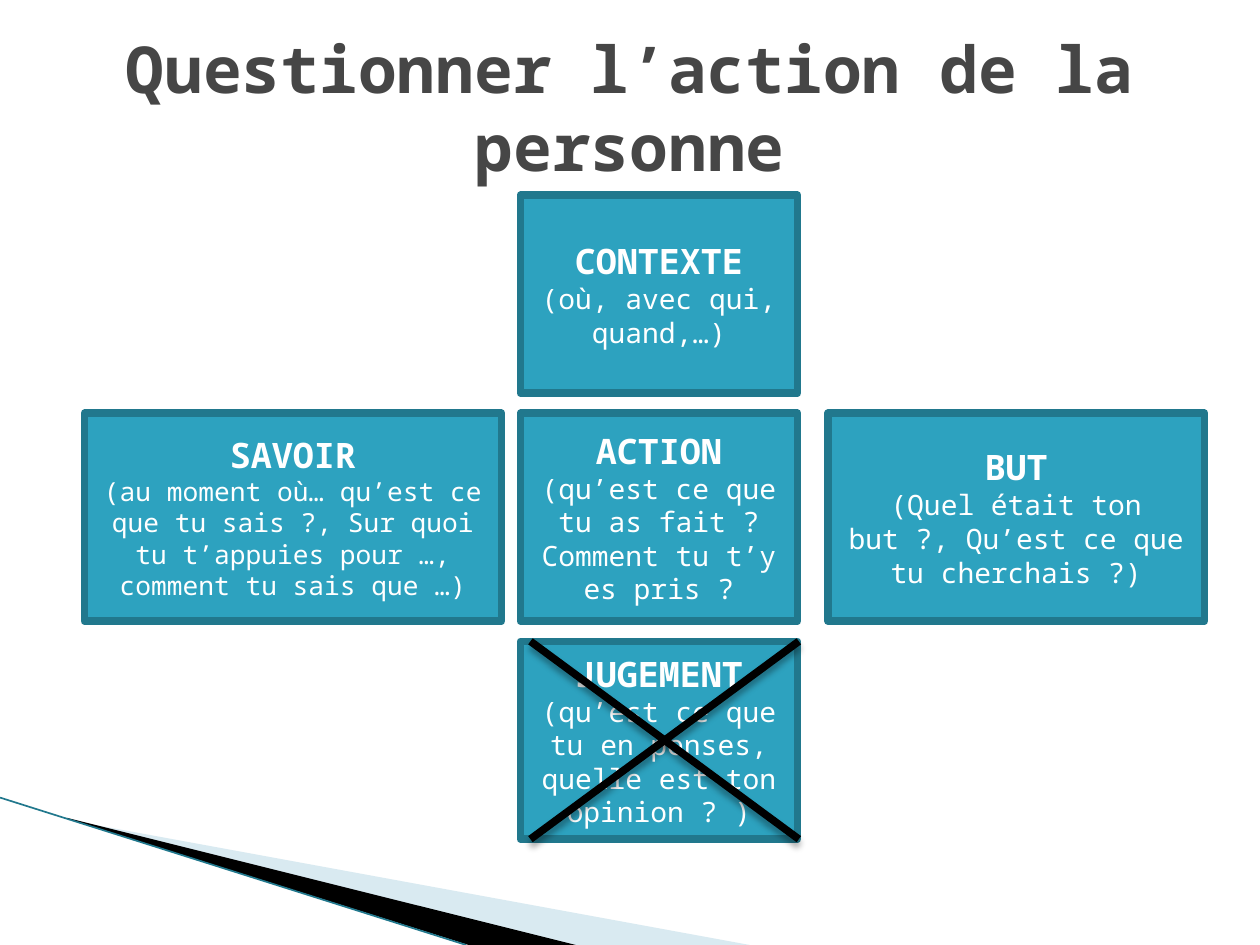
from dataclasses import dataclass

from lxml.etree import SubElement
from pptx import Presentation
from pptx.dml.color import RGBColor
from pptx.enum.shapes import MSO_CONNECTOR, MSO_SHAPE
from pptx.enum.text import MSO_ANCHOR, MSO_AUTO_SIZE, PP_ALIGN
from pptx.oxml.ns import qn
from pptx.util import Pt

SCALE = 9144


@dataclass(frozen=True)
class Theme:
    """Colours, font and sizes of the slide."""
    font: str = "Noto Sans Mono"
    title: str = "464646"
    fill: str = "2DA2BF"
    edge: str = "21788D"
    pale: str = "A0CBDC"
    white: str = "FFFFFF"
    black: str = "000000"
    title_pt: float = 36.9
    head_pt: float = 20
    body_pt: float = 16
    dense_pt: float = 15
    edge_pt: float = 4.33
    thin_pt: float = 0.95


THEME = Theme()


def px(*nums):
    """Turn px lengths into EMU."""
    return [n * SCALE for n in nums]


def style(para, size, colour, bold):
    """Centre a paragraph and format its runs."""
    para.alignment = PP_ALIGN.CENTER
    for run in para.runs:
        font = run.font
        font.name, font.size, font.bold = THEME.font, Pt(size), bold
        font.color.rgb = RGBColor.from_string(colour)


def paint(line, colour, width):
    """Set the colour and width of a line."""
    line.color.rgb = RGBColor.from_string(colour)
    line.width = Pt(width)


def add_title(slide, box, text):
    """Place and format the title."""
    title = slide.shapes.title
    title.left, title.top, title.width, title.height = px(*box)
    frame = title.text_frame
    frame.text = text
    frame.word_wrap = True
    frame.auto_size = MSO_AUTO_SIZE.NONE
    frame.vertical_anchor = MSO_ANCHOR.MIDDLE
    style(frame.paragraphs[0], THEME.title_pt, THEME.title, True)


def add_line(slide, start, end, colour, width):
    """Draw a straight line and return its empty effect list."""
    line = slide.shapes.add_connector(MSO_CONNECTOR.STRAIGHT, *px(*start, *end))
    paint(line.line, colour, width)
    return SubElement(line._element.spPr, qn("a:effectLst"))


def add_wedge(slide, left, top, points, colour, alpha=100):
    """Draw a filled outline from points relative to its corner."""
    spots = [(left + x, top + y) for x, y in points]
    pen = slide.shapes.build_freeform(*spots[0], scale=SCALE)
    pen.add_line_segments(spots[1:], close=True)
    shape = pen.convert_to_shape()
    shape.shadow.inherit = False
    shape.fill.solid()
    shape.fill.fore_color.rgb = RGBColor.from_string(colour)
    shape.line.fill.background()
    if alpha < 100:
        tint = shape._element.spPr.find(qn("a:solidFill"))[0]
        SubElement(tint, qn("a:alpha"), val=str(alpha * 1000))


def add_swoosh(slide, box):
    """Draw the wedges and thin line in the lower left corner."""
    left, top, width, height = box
    base = top + height
    add_wedge(slide, left + 55, top + 17,
              [(0, 1), (width - 55, 100), (401, 100), (0, 0)], THEME.pale, 40)
    add_wedge(slide, left + 53, top + 16,
              [(0, 0), (404, 101), (319, 101), (1, 1)], THEME.black)
    add_line(slide, (left, top), (left + 370, base), THEME.edge, THEME.thin_pt)


def add_card(slide, box, head, body, size=THEME.body_pt):
    """Draw a framed card with a heading and its questions."""
    card = slide.shapes.add_shape(MSO_SHAPE.RECTANGLE, *px(*box))
    card.shadow.inherit = False
    card.fill.solid()
    card.fill.fore_color.rgb = RGBColor.from_string(THEME.fill)
    paint(card.line, THEME.edge, THEME.edge_pt)
    frame = card.text_frame
    frame.word_wrap = True
    frame.vertical_anchor = MSO_ANCHOR.MIDDLE
    frame.text = f"{head}\n{body}"
    first, last = frame.paragraphs
    style(first, THEME.head_pt, THEME.white, True)
    style(last, size, THEME.white, False)


def add_cross(slide, box):
    """Strike a box out with two shaded diagonals."""
    left, top, width, height = box
    right, base = left + width, top + height
    for start, end in (((right, top), (left, base)), ((left, top), (right, base))):
        effects = add_line(slide, start, end, THEME.black, THEME.edge_pt)
        shade = SubElement(effects, qn("a:outerShdw"), blurRad=str(Pt(4)),
                           dist=str(Pt(3)), dir="5400000", rotWithShape="0")
        tint = SubElement(shade, qn("a:srgbClr"), val=THEME.black)
        SubElement(tint, qn("a:alpha"), val="35000")


def add_grid(slide, box):
    """Lay the five cards out as a plus sign and strike the last."""
    left, top, width, height = box
    gap, tall, mid = 16, 157, 220
    row = top + tall + gap
    deep = height - 2 * (tall + gap)
    low = row + deep + gap
    side, wide = 331, 299
    col = left + side + 15
    cards = [
        ((col, top, mid, tall), "CONTEXTE", "(où, avec qui, quand,…)"),
        ((col, row, mid, deep), "ACTION",
         "(qu’est ce que tu as fait ? Comment tu t’y es pris ?"),
        ((left, row, side, deep), "SAVOIR",
         "(au moment où… qu’est ce que tu sais ?, Sur quoi tu t’appuies "
         "pour …, comment tu sais que …)", THEME.dense_pt),
        ((left + width - wide, row, wide, deep), "BUT",
         "(Quel était ton but ?, Qu’est ce que tu cherchais ?)"),
        ((col, low, mid, tall), "JUGEMENT",
         "(qu’est ce que tu en penses, quelle est ton opinion ? )"),
    ]
    for card in cards:
        add_card(slide, *card)
    add_cross(slide, (col + 8, low, mid - 7, tall))


def main():
    """Build and save the slide."""
    deck = Presentation()
    deck.slide_width, deck.slide_height = px(1000, 750)
    slide = deck.slides.add_slide(deck.slide_layouts[5])
    add_swoosh(slide, (0, 633, 595, 117))
    add_title(slide, (50, 22, 900, 125), "Questionner l’action de la personne")
    add_grid(slide, (67, 155, 889, 511))
    deck.save("out.pptx")


if __name__ == "__main__":
    main()
